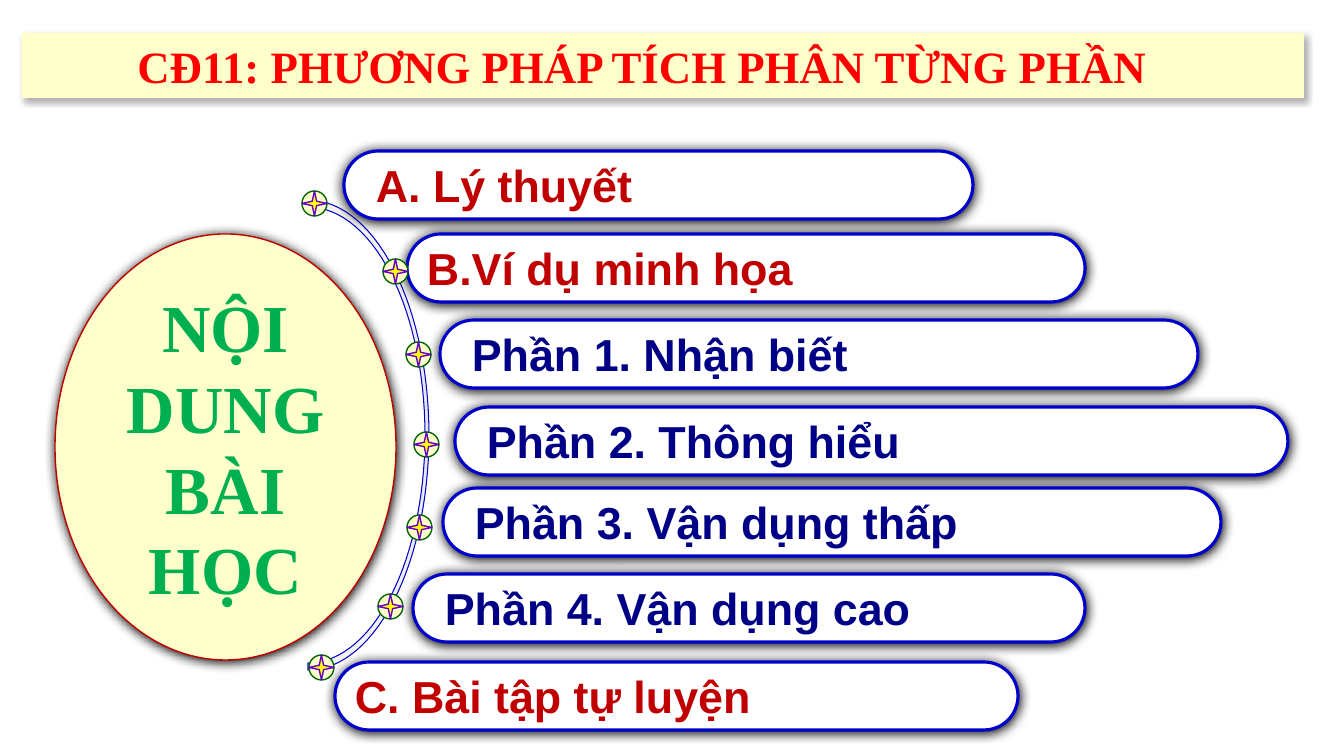
import copy
import math

import lxml.etree
import pptx
import pptx.dml.color
import pptx.enum.shapes
import pptx.enum.text
import pptx.oxml
import pptx.oxml.ns
import pptx.util

RGB = pptx.dml.color.RGBColor
SHAPE = pptx.enum.shapes.MSO_SHAPE
ALIGN = pptx.enum.text.PP_ALIGN
ANCHOR = pptx.enum.text.MSO_ANCHOR

WHITE = RGB(0xFF, 0xFF, 0xFF)
CREAM = RGB(0xFF, 0xFF, 0xCC)
YELLOW = RGB(0xFF, 0xFF, 0x00)
RED = RGB(0xFF, 0x00, 0x00)
CRIMSON = RGB(0xC0, 0x00, 0x00)
NAVY = RGB(0x00, 0x00, 0x86)
BLUE = RGB(0x00, 0x00, 0xCC)
PURPLE = RGB(0x66, 0x00, 0xCC)
DARK_GREEN = RGB(0x00, 0x66, 0x00)
GREEN = RGB(0x00, 0xB0, 0x50)
PALE_GREY = RGB(0xF4, 0xF4, 0xF4)
GREY = RGB(0xE7, 0xE6, 0xE6)

# Content
TITLE = "CĐ11: PHƯƠNG PHÁP TÍCH PHÂN TỪNG PHẦN"
HUB = "NỘI DUNG BÀI HỌC"
# text, colour, bar (left, top, width), text inset, star (left, top)
SECTIONS = [
    ("A. Lý thuyết", CRIMSON, (344, 151, 629), 22, (302, 191)),
    ("B.Ví dụ minh họa", CRIMSON, (407, 234, 678), 10, (383, 259)),
    ("Phần 1. Nhận biết", NAVY, (440, 320, 758), 22, (406, 342)),
    ("Phần 2. Thông hiểu", NAVY, (455, 407, 833), 22, (414, 432)),
    ("Phần 3. Vận dụng thấp", NAVY, (443, 488, 778), 22, (407, 515)),
    ("Phần 4. Vận dụng cao", NAVY, (413, 574, 672), 22, (378, 594)),
    ("C. Bài tập tự luyện", CRIMSON, (335, 662, 683), 10, (309, 655)),
]
BAR_HEIGHT = 68
STAR_SIZE = 25

# Curve: half ellipses around one centre
CURVE_CENTRE = (308, 435)
OUTER_RADII = (121, 235)
INNER_RADII = (117, 228)

# Shadows: opacity %, blur pt, distance pt, direction in degrees
BAND_SHADOW = (30, 4.5, 2.6, 53)
GLOW_SHADOW = (100, 8.5, 1, 90)

PX = 914400 / 100.8


def px(length):
    return pptx.util.Emu(round(length * PX))


def add_shadow(shape, opacity, blur, distance, direction):
    effects = shape._element.spPr.find(pptx.oxml.ns.qn("a:effectLst"))
    effects.append(pptx.oxml.parse_xml(
        f'<a:outerShdw {pptx.oxml.ns.nsdecls("a")} blurRad="{round(blur * 12700)}"'
        f' dist="{round(distance * 12700)}" dir="{direction * 60000}"'
        f' algn="ctr" rotWithShape="0"><a:srgbClr val="000000">'
        f'<a:alpha val="{opacity * 1000}"/></a:srgbClr></a:outerShdw>'))


def add_figure(kind, box, fill, line=None, width=1, shadow=None):
    figure = slide.shapes.add_shape(kind, *map(px, box))
    figure.shadow.inherit = False
    figure.fill.solid()
    figure.fill.fore_color.rgb = fill
    if line is None:
        figure.line.fill.background()
    else:
        figure.line.color.rgb = line
        figure.line.width = pptx.util.Pt(width)
    if shadow:
        add_shadow(figure, *shadow)
    return figure


def write(shape, text, font, size, color, align, anchor=ANCHOR.MIDDLE):
    frame = shape.text_frame
    frame.word_wrap = True
    frame.vertical_anchor = anchor
    paragraph = frame.paragraphs[0]
    paragraph.alignment = align
    run = paragraph.add_run()
    run.text = text
    run.font.name = font
    run.font.size = pptx.util.Pt(size)
    run.font.bold = True
    run.font.color.rgb = color


def half_ellipse(radii, degrees):
    return [(round((CURVE_CENTRE[0] + radii[0] * math.cos(math.radians(d))) * PX),
             round((CURVE_CENTRE[1] + radii[1] * math.sin(math.radians(d))) * PX))
            for d in degrees]


deck = pptx.Presentation()
deck.slide_width, deck.slide_height = px(1344), px(756)
slide = deck.slides.add_slide(deck.slide_layouts[6])

# Title band
add_figure(SHAPE.RECTANGLE, (22, 33, 1282, 65), CREAM, shadow=BAND_SHADOW)

# Curve
outline = (half_ellipse(INNER_RADII, range(-90, 91, 3))
           + half_ellipse(OUTER_RADII, range(90, -91, -3)))
builder = slide.shapes.build_freeform(*outline[0], scale=1.0)
builder.add_line_segments(outline[1:], close=True)
curve = builder.convert_to_shape()
curve.shadow.inherit = False
curve.line.color.rgb = BLUE
curve.line.width = pptx.util.Pt(0.75)
curve.fill.gradient()
curve.fill.gradient_angle = 90
first_stop, middle_stop = curve.fill.gradient_stops
first_stop.color.rgb, first_stop.position = PALE_GREY, 0
middle_stop.color.rgb, middle_stop.position = GREY, 0.5
stop_list = curve._element.spPr.find(".//" + pptx.oxml.ns.qn("a:gsLst"))
last_stop = copy.deepcopy(stop_list[0])
last_stop.set("pos", "100000")
stop_list.append(last_stop)

# Section bars
for text, color, (left, top, width), inset, _ in SECTIONS:
    bar = add_figure(SHAPE.ROUNDED_RECTANGLE, (left, top, width, BAR_HEIGHT),
                     WHITE, BLUE, 2.25, GLOW_SHADOW)
    bar.adjustments[0] = 0.5
    bar.text_frame.margin_left = px(inset)
    write(bar, text, "Arial", 32, color, ALIGN.LEFT)

# Stars on the curve
for *_, corner in SECTIONS:
    star_box = (*corner, STAR_SIZE, STAR_SIZE)
    add_figure(SHAPE.OVAL, star_box, CREAM, DARK_GREEN)
    add_figure(SHAPE.STAR_4_POINT, star_box, YELLOW, PURPLE)

# Hub
hub = add_figure(SHAPE.OVAL, (55, 234, 341, 426), CREAM, CRIMSON, 1, GLOW_SHADOW)
write(hub, HUB, "Times New Roman", 48, GREEN, ALIGN.CENTER)

# Title
title = slide.shapes.add_textbox(*map(px, (33, 34, 1218, 64)))
write(title, TITLE, "Times New Roman", 32, RED, ALIGN.CENTER, ANCHOR.TOP)

deck.save("out.pptx")
